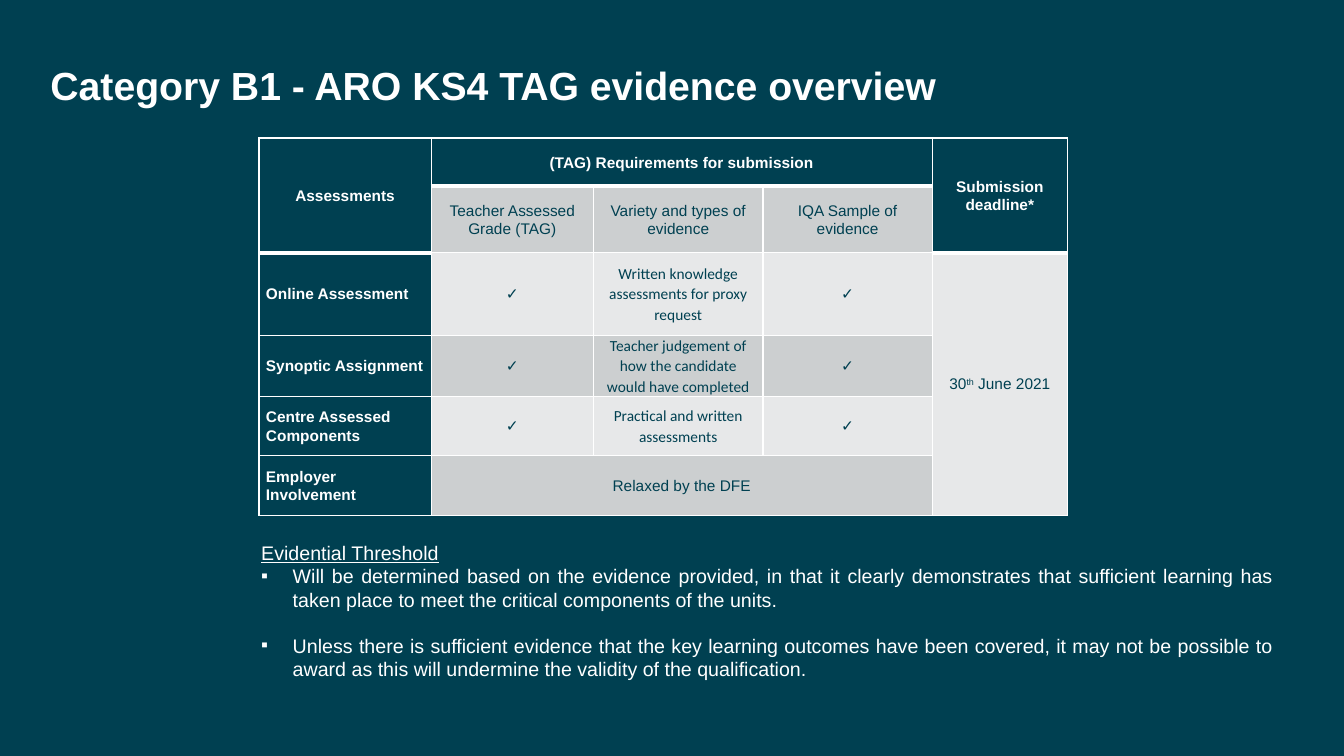
from dataclasses import dataclass

from lxml.etree import SubElement
from pptx import Presentation
from pptx.dml.color import RGBColor
from pptx.enum.text import MSO_ANCHOR, MSO_AUTO_SIZE, PP_ALIGN
from pptx.oxml.ns import qn
from pptx.util import Pt

TEAL = RGBColor(0x00, 0x40, 0x51)
WHITE = RGBColor(0xFF, 0xFF, 0xFF)
GREY = RGBColor(0xCC, 0xCF, 0xD0)
PALE = RGBColor(0xE7, 0xE8, 0xE9)

COLUMN_WIDTHS = (123, 116, 121, 121, 96.5)
ROW_HEIGHTS = (34.5, 47.5, 59, 42.5, 42.5, 42.5)
TICK = "✓"


@dataclass(frozen=True)
class Entry:
    row: int
    column: int
    text: str
    fill: RGBColor
    row_span: int = 1
    column_span: int = 1
    align: PP_ALIGN = PP_ALIGN.CENTER
    font_name: str = "Arial"
    superscript: str = ""
    ending: str = ""


@dataclass(frozen=True)
class Note:
    text: str
    bulleted: bool = True
    space_before: float = 0


ASSESSMENTS = (
    ("Online Assessment", "Written knowledge assessments for proxy request"),
    ("Synoptic Assignment", "Teacher judgement of how the candidate would have completed"),
    ("Centre Assessed Components", "Practical and written assessments"),
)
NOTES = (
    Note("Evidential Threshold", bulleted=False),
    Note("Will be determined based on the evidence provided, in that it clearly "
         "demonstrates that sufficient learning has taken place to meet the critical "
         "components of the units."),
    Note("Unless there is sufficient evidence that the key learning outcomes have been "
         "covered, it may not be possible to award as this will undermine the validity "
         "of the qualification.", space_before=16),
)


def apply_format(target, values: dict) -> None:
    for name, value in values.items():
        setattr(target, name, value)


def format_font(font, size: float, color: RGBColor, **values) -> None:
    apply_format(font, {"name": "Arial", "size": Pt(size), "bold": False} | values)
    font.color.rgb = color


def table_entries() -> list[Entry]:
    entries = [
        Entry(0, 0, "Assessments", TEAL, row_span=2),
        Entry(0, 1, "(TAG) Requirements for submission", TEAL, column_span=3),
        Entry(0, 4, "Submission deadline*", TEAL, row_span=2),
        Entry(1, 1, "Teacher Assessed Grade (TAG)", GREY),
        Entry(1, 2, "Variety and types of evidence", GREY),
        Entry(1, 3, "IQA Sample of evidence", GREY),
        Entry(2, 4, "30", PALE, row_span=4, superscript="th", ending=" June 2021"),
        Entry(5, 0, "Employer Involvement", TEAL, align=PP_ALIGN.LEFT),
        Entry(5, 1, "Relaxed by the DFE", GREY, column_span=3),
    ]
    for row, (assessment, evidence) in enumerate(ASSESSMENTS, start=2):
        entries.append(Entry(row, 0, assessment, TEAL, align=PP_ALIGN.LEFT))
        band = GREY if row % 2 else PALE
        for column, text in enumerate((TICK, evidence, TICK), start=1):
            entries.append(Entry(row, column, text, band, font_name="Calibri"))
    return entries


def add_borders(cell, top: float, bottom: float) -> None:
    properties = cell._tc.get_or_add_tcPr()
    for side, width in (("L", 1), ("R", 1), ("T", top), ("B", bottom)):
        line = SubElement(properties, qn(f"a:ln{side}"), w=str(Pt(width)))
        SubElement(SubElement(line, qn("a:solidFill")), qn("a:srgbClr"), val=str(WHITE))


def draw_entry(table, entry: Entry) -> None:
    last_row = entry.row + entry.row_span - 1
    last_column = entry.column + entry.column_span - 1
    is_header = entry.row == 0
    is_below_header = entry.row == (2 if entry.column in (0, 4) else 1)
    for row in range(entry.row, last_row + 1):
        for column in range(entry.column, last_column + 1):
            cell = table.cell(row, column)
            add_borders(cell, 3 if is_below_header and row == entry.row else 1,
                        3 if is_header else 1)
            cell.fill.solid()
            cell.fill.fore_color.rgb = entry.fill
    cell = table.cell(entry.row, entry.column)
    if (last_row, last_column) != (entry.row, entry.column):
        cell.merge(table.cell(last_row, last_column))
    apply_format(cell, {"vertical_anchor": MSO_ANCHOR.MIDDLE, "margin_left": Pt(5),
                        "margin_right": Pt(5), "margin_top": 0, "margin_bottom": 0})
    para = cell.text_frame.paragraphs[0]
    apply_format(para, {"alignment": entry.align, "line_spacing": 1.07,
                        "space_after": Pt(8)})
    on_teal = entry.fill == TEAL
    for text in filter(None, (entry.text, entry.superscript, entry.ending)):
        span = para.add_run()
        span.text = text
        format_font(span.font, 11, WHITE if on_teal else TEAL,
                    name=entry.font_name, bold=on_teal)
        if text == entry.superscript:
            span._r.get_or_add_rPr().set("baseline", "30000")


def draw_title(page) -> None:
    title = page.shapes.title
    apply_format(title, {"left": Pt(-72.5), "top": Pt(44), "width": Pt(849.5),
                         "height": Pt(34)})
    frame = title.text_frame
    frame.text = "Category B1 - ARO KS4 TAG evidence overview"
    apply_format(frame, {"vertical_anchor": MSO_ANCHOR.TOP, "word_wrap": True,
                         "auto_size": MSO_AUTO_SIZE.NONE})
    para = frame.paragraphs[0]
    apply_format(para, {"alignment": PP_ALIGN.CENTER, "line_spacing": 0.9})
    format_font(para.runs[0].font, 28, WHITE, bold=True)


def draw_table(page) -> None:
    table = page.shapes.add_table(
        len(ROW_HEIGHTS), len(COLUMN_WIDTHS), Pt(185), Pt(98.5),
        Pt(sum(COLUMN_WIDTHS)), Pt(sum(ROW_HEIGHTS))).table
    apply_format(table, {"first_row": False, "horz_banding": False})
    for column, width in zip(table.columns, COLUMN_WIDTHS):
        column.width = Pt(width)
    for row, height in zip(table.rows, ROW_HEIGHTS):
        row.height = Pt(height)
    for entry in table_entries():
        draw_entry(table, entry)


def draw_notes(page) -> None:
    box = page.shapes.add_textbox(Pt(179.5), Pt(382.5), Pt(737.5), Pt(114))
    frame = box.text_frame
    apply_format(frame, {"word_wrap": True, "auto_size": MSO_AUTO_SIZE.SHAPE_TO_FIT_TEXT})
    for index, note in enumerate(NOTES):
        para = frame.add_paragraph() if index else frame.paragraphs[0]
        para.alignment = PP_ALIGN.JUSTIFY
        if note.bulleted:
            properties = para._p.get_or_add_pPr()
            properties.set("marL", str(Pt(22.5)))
            properties.set("indent", str(Pt(-22.5)))
            SubElement(properties, qn("a:buFont"), typeface="Arial")
            SubElement(properties, qn("a:buChar"), char="▪")
        if note.space_before:
            para.space_before = Pt(note.space_before)
        span = para.add_run()
        span.text = note.text
        format_font(span.font, 14, WHITE, underline=not note.bulleted)


def main() -> None:
    deck = Presentation()
    apply_format(deck, {"slide_width": Pt(960), "slide_height": Pt(540)})
    page = deck.slides.add_slide(deck.slide_layouts.get_by_name("Title Only"))
    page.background.fill.solid()
    page.background.fill.fore_color.rgb = TEAL
    draw_title(page)
    draw_table(page)
    draw_notes(page)
    deck.save("out.pptx")


if __name__ == "__main__":
    main()
